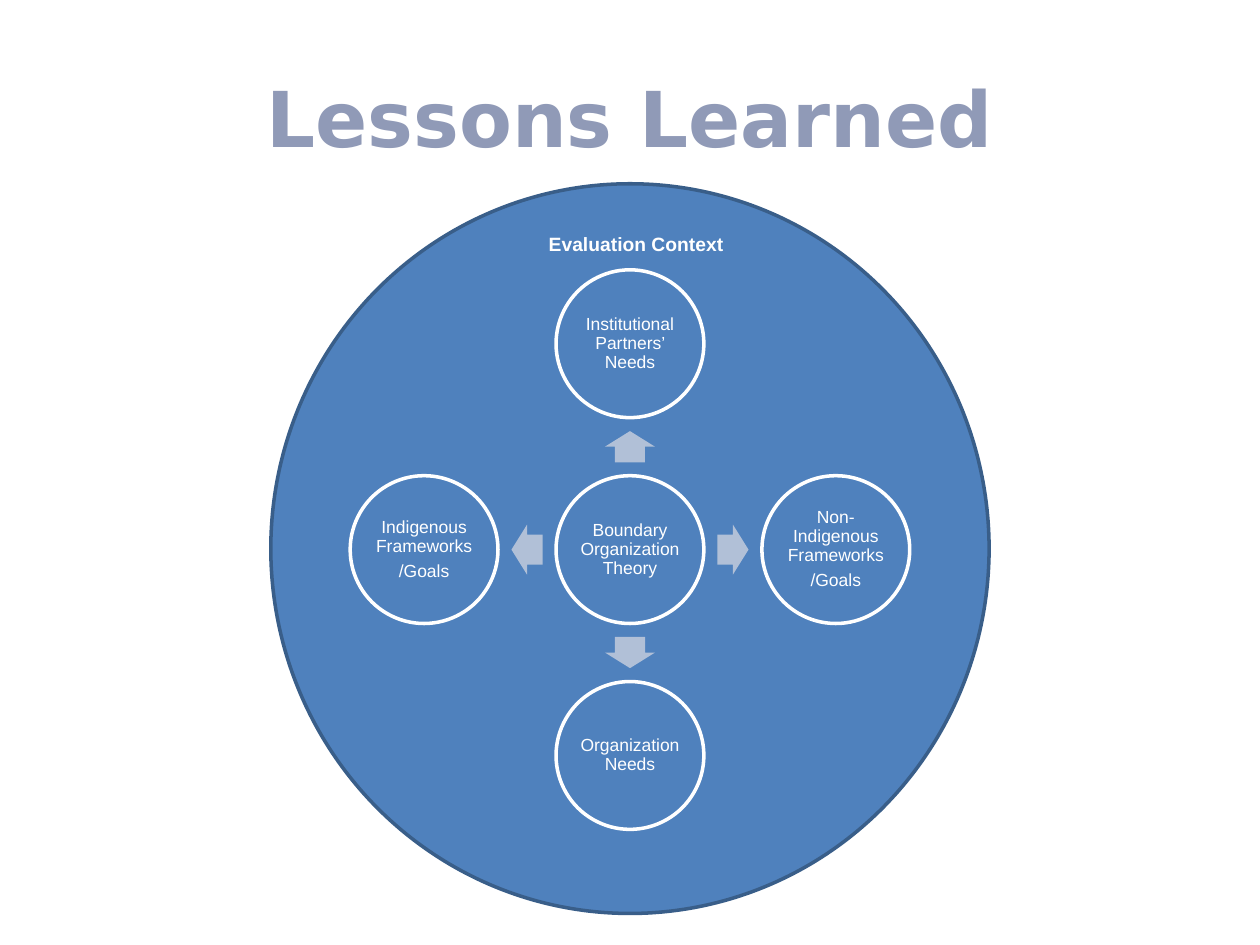
"""Build the Lessons Learned slide: a hub with four linked circles."""
from pptx import Presentation
from pptx.dml.color import RGBColor
from pptx.enum.shapes import MSO_SHAPE
from pptx.enum.text import MSO_ANCHOR, MSO_AUTO_SIZE, PP_ALIGN
from pptx.util import Cm, Pt


def color(code):
    """Turn a hex string into a colour."""
    return RGBColor.from_string(code)


class Deck:
    """Holds the style and the current slide."""

    font, white, blue, edge, pale = "Arial", "FFFFFF", "4F81BD", "395E89", "B1C0D7"

    def __init__(self, show):
        """Add a title-only slide with a group for the diagram."""
        self.slide = show.slides.add_slide(show.slide_layouts[5])
        self.group = self.slide.shapes.add_group_shape().shapes

    def letter(self, shape, text, size, inset, bold=False, font=None, ink=None):
        """Set centred, formatted text in a shape."""
        frame = shape.text_frame
        frame.text = text
        frame.word_wrap = True
        frame.auto_size = MSO_AUTO_SIZE.NONE
        frame.margin_left = frame.margin_right = Cm(inset[0])
        frame.margin_top = frame.margin_bottom = Cm(inset[1])
        for par in frame.paragraphs:
            par.alignment = PP_ALIGN.CENTER
            for run in par.runs:
                run.font.size = Pt(size)
                run.font.name = font or self.font
                run.font.bold = bold
                run.font.color.rgb = color(ink or self.white)
        return frame

    def title(self, text):
        """Place and fill the title."""
        shape = self.slide.shapes.title
        shape.left, shape.top, shape.width, shape.height = Cm(1.27), Cm(0.76), Cm(22.86), Cm(3.18)
        frame = self.letter(shape, text, 44, (0.25, 0.25), True, "DejaVu Sans", "909AB7")
        frame.vertical_anchor = MSO_ANCHOR.MIDDLE

    def label(self, text, left, top, width, height):
        """Add a bold heading."""
        box = self.group.add_textbox(Cm(left), Cm(top), Cm(width), Cm(height))
        self.letter(box, text, 11, (0.25, 0.13), True)

    def shape(self, kind, x, y, width, height, fill, line=None):
        """Add a flat shape centred on a point."""
        item = self.group.add_shape(
            kind, Cm(x - width / 2), Cm(y - height / 2), Cm(width), Cm(height))
        item.shadow.inherit = False
        item.fill.solid()
        item.fill.fore_color.rgb = color(fill)
        if line:
            item.line.color.rgb = color(line)
            item.line.width = Pt(2)
        else:
            item.line.fill.background()
        return item

    def field(self, x, y, width, height):
        """Add the large circle behind the diagram."""
        self.shape(MSO_SHAPE.OVAL, x, y, width, height, self.blue, self.edge)

    def node(self, text, x, y):
        """Add a circle with text."""
        item = self.shape(MSO_SHAPE.OVAL, x, y, 2.98, 2.98, self.blue, self.white)
        frame = self.letter(item, text, 10, (0.03, 0.03))
        frame.vertical_anchor = MSO_ANCHOR.MIDDLE
        for place, par in enumerate(frame.paragraphs):
            par.line_spacing = 0.9
            par.space_before = Pt(3.5 if place else 0)

    def arrow(self, x, y, turn):
        """Add a block arrow turned by an angle."""
        item = self.shape(MSO_SHAPE.RIGHT_ARROW, x, y, 0.63, 1.01, self.pale)
        item.adjustments[0], item.adjustments[1] = 0.6, 0.5
        item.rotation = turn


def main():
    """Build and save the slide."""
    show = Presentation()
    show.slide_width, show.slide_height = Cm(25.4), Cm(19.05)
    deck = Deck(show)
    deck.title("Lessons Learned")
    x, y, step = 12.7, 11.08, 4.15
    deck.field(x, 11.06, 14.48, 14.71)
    deck.node("Boundary Organization Theory", x, y)
    spokes = [
        ("Institutional Partners’ Needs", 0, -1, 270),
        ("Non-Indigenous Frameworks\n/Goals", 1, 0, 0),
        ("Organization Needs", 0, 1, 90),
        ("Indigenous Frameworks\n/Goals", -1, 0, 180),
    ]
    for text, across, down, turn in spokes:
        deck.arrow(x + across * step / 2, y + down * step / 2, turn)
        deck.node(text, x + across * step, y + down * step)
    deck.label("Evaluation Context", 9.27, 4.55, 7.11, 0.74)
    show.save("out.pptx")


if __name__ == "__main__":
    main()
